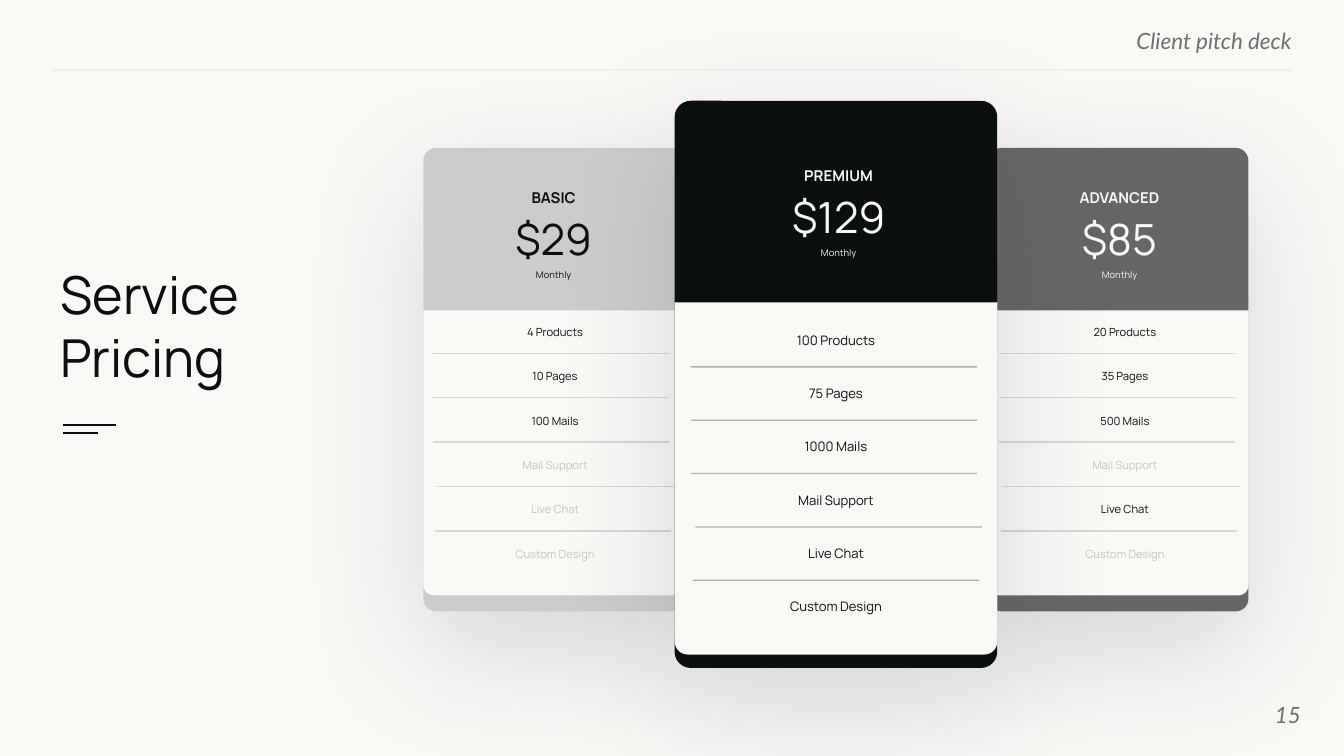
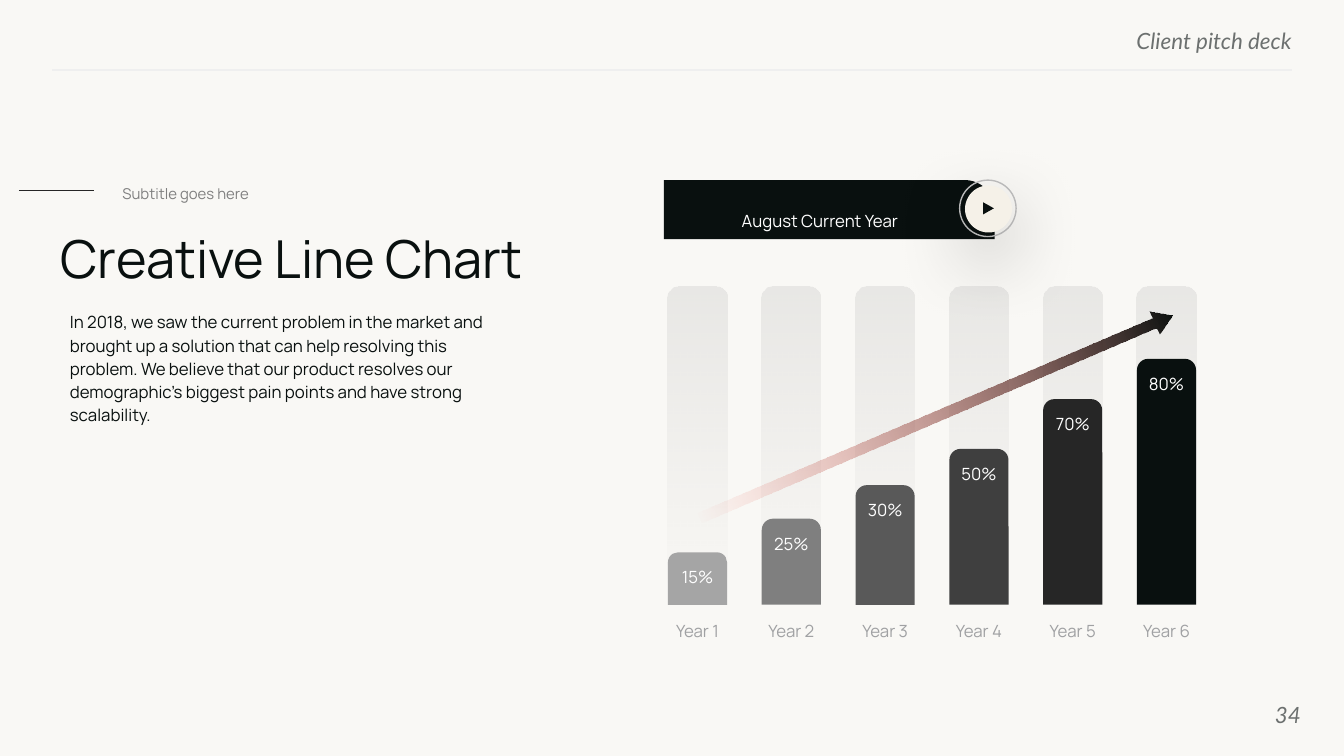
from lxml import etree
from pptx import Presentation
from pptx.dml.color import RGBColor
from pptx.enum.shapes import MSO_CONNECTOR, MSO_SHAPE
from pptx.enum.text import MSO_ANCHOR, MSO_AUTO_SIZE, PP_ALIGN
from pptx.oxml.ns import qn
from pptx.util import Inches, Pt

LINE = MSO_CONNECTOR.STRAIGHT
ROUND, ROUND_TOP = MSO_SHAPE.ROUNDED_RECTANGLE, MSO_SHAPE.ROUND_2_SAME_RECTANGLE
ROUND_CORNER, UP_ARROW = MSO_SHAPE.ROUND_1_RECTANGLE, MSO_SHAPE.UP_ARROW
OVAL, TRIANGLE = MSO_SHAPE.OVAL, MSO_SHAPE.ISOSCELES_TRIANGLE
LEFT, CENTER, RIGHT = PP_ALIGN.LEFT, PP_ALIGN.CENTER, PP_ALIGN.RIGHT
TOP, MIDDLE = MSO_ANCHOR.TOP, MSO_ANCHOR.MIDDLE

rgb = RGBColor.from_string
INK, PAPER, WHITE = "09100F", "F9F8F5", "FFFFFF"
STONE, RULE, FADED, HEADER = "A5A5A5", "D7D7D7", "C4C4C4", "6C706F"
CHARCOAL, GREY = "262626", "7F7F7F"
# colour, opacity in percent, blur and distance in points
CARD_SHADOW = ("221B43", 15, 69, 22)
BUTTON_SHADOW = ("000000", 29, 40, 13)

prs = Presentation()
prs.slide_width, prs.slide_height = Inches(10), Inches(5.625)
COL = prs.slide_width / 100  # square grid: 100 columns, 56.25 rows
prs.slide_master.background.fill.solid()
prs.slide_master.background.fill.fore_color.rgb = rgb(PAPER)


def label(s, x, y, w, h, text, size, color=INK, align=CENTER, font="Manrope",
          bold=False, italic=False, spacing=1.0, anchor=TOP, inset=(0.7, 0.4),
          wrap=False, box=None):
    """Write text into box, or into a new text box, placed in grid columns."""
    box = box or s.shapes.add_textbox(0, 0, 0, 0)
    box.left, box.top, box.width, box.height = [round(v * COL) for v in (x, y, w, h)]
    tf = box.text_frame
    tf.text = text
    tf.word_wrap, tf.auto_size, tf.vertical_anchor = wrap, MSO_AUTO_SIZE.NONE, anchor
    tf.margin_left = tf.margin_right = round(inset[0] * COL)
    tf.margin_top = tf.margin_bottom = round(inset[1] * COL)
    p = tf.paragraphs[0]
    p.alignment, p.line_spacing = align, spacing
    f = p.runs[0].font
    f.name, f.size, f.bold, f.italic = font, Pt(size), bold, italic
    f.color.rgb = rgb(color)


def draw(s, kind, x, y, w, h, colors, alphas=(), adj=(), rot=0, shadow=None, weight=0.75):
    """Draw a line or a shape; two colors make a gradient from top to bottom."""
    x, y, w, h = [round(v * COL) for v in (x, y, w, h)]
    if kind is LINE:
        sp = s.shapes.add_connector(LINE, x, y, x + w, y + h)
        sp.line.color.rgb, sp.line.width = rgb(colors[0]), Pt(weight)
        etree.SubElement(sp._element.spPr, qn("a:effectLst"))
    else:
        sp = s.shapes.add_shape(kind, x, y, w, h)
        sp.shadow.inherit = False
        sp.line.fill.background()
        sp.rotation = rot
        for i, value in enumerate(adj):
            sp.adjustments[i] = value
        if len(colors) == 2:
            sp.fill.gradient()
            sp.fill.gradient_angle = 270
            for stop, color in zip(sp.fill.gradient_stops, colors):
                stop.color.rgb = rgb(color)
        else:
            sp.fill.solid()
            sp.fill.fore_color.rgb = rgb(colors[0])
    spPr = sp._element.spPr
    for clr, alpha in zip(spPr.xpath(".//a:srgbClr"), alphas):
        etree.SubElement(clr, qn("a:alpha"), val=str(alpha * 1000))
    if shadow:
        color, alpha, blur, dist = shadow
        outer = etree.SubElement(spPr.find(qn("a:effectLst")), qn("a:outerShdw"),
                                 blurRad=str(Pt(blur)), dist=str(Pt(dist)),
                                 dir="5400000", algn="t", rotWithShape="0")
        clr = etree.SubElement(outer, qn("a:srgbClr"), val=color)
        etree.SubElement(clr, qn("a:alpha"), val=str(alpha * 1000))
    return sp


# Title, header and page number of every slide
slides = []
for title, x, y, w, number in [("Service Pricing", 4.5, 19.5, 21, "15"),
                               ("Creative Line Chart", 4.5, 16.8, 92.3, "34")]:
    s = prs.slides.add_slide(prs.slide_layouts[5])
    label(s, x, y, w, 5.1, title, 28, align=LEFT, inset=(0, 0), wrap=True,
          box=s.shapes.title)
    s.shapes.title.text_frame.paragraphs[0].space_after = Pt(10)
    running = dict(color=HEADER, align=RIGHT, font="Lato", italic=True, inset=(0, 0))
    label(s, 57.6, 2, 38.5, 1.8, "Client pitch deck", 12, **running)
    draw(s, LINE, 3.9, 5.2, 92.2, 0, ["EFEFEF"])
    label(s, 90.8, 51, 6, 4.3, number, 12, anchor=MIDDLE, **running)
    slides.append(s)

# Service pricing: three cards, the premium one in front
s = slides[0]
for y, w in [(31.6, 3.9), (32.2, 2.6)]:
    draw(s, LINE, 4.7, y, w, 0, [INK], weight=1)

side = dict(y=11, w=19.3, h=34.5, panel_y=23.1, panel_h=21.2, head_y=13.6,
            row_y=23.8, row_h=1.8, pitch=3.3, size=6, rule_y=26.3, rule_dx=0.7,
            rule_w=17.6, rule=RULE, alphas=())
front = dict(y=7.5, w=24, h=42.2, panel_y=22.5, panel_h=26.2, head_y=12,
             row_y=24.3, row_h=3.1, pitch=3.97, size=7, rule_y=27.3, rule_dx=1.2,
             rule_w=21.3, rule=INK, alphas=(30,))
features = ["Mail Support", "Live Chat", "Custom Design"]
rule_shifts = [0, 0, 0, 0.35, 0.15]
cards = [
    (side, 31.5, 41.2, 41.3, "CCCCCC", INK, "BASIC", "$29",
     ["4 Products", "10 Pages", "100 Mails"], features),
    (side, 73.6, 83.3, 83.7, "666666", PAPER, "ADVANCED", "$85",
     ["20 Products", "35 Pages", "500 Mails"], ["Mail Support", "Custom Design"]),
    (front, 50.2, 62.4, 62.2, INK, PAPER, "PREMIUM", "$129",
     ["100 Products", "75 Pages", "1000 Mails"], []),
]
for c, x, head_x, row_x, back, ink, plan, price, amounts, missing in cards:
    draw(s, ROUND, x, c["y"], c["w"], c["h"], [back], adj=[0.05], shadow=CARD_SHADOW)
    draw(s, ROUND_TOP, x, c["panel_y"], c["w"], c["panel_h"], [PAPER],
         adj=[0.04, 0], rot=180)
    for i, text in enumerate(amounts + features):
        label(s, row_x - 4, c["row_y"] + i * c["pitch"], 8, c["row_h"], text, c["size"],
              FADED if text in missing else INK)
    for i, shift in enumerate(rule_shifts):
        draw(s, LINE, x + c["rule_dx"] + shift, c["rule_y"] + i * c["pitch"],
             c["rule_w"], 0, [c["rule"]], c["alphas"])
    for text, dy, w, h, size in [(plan, 0, 11.8, 2.1, 8), (price, 1.8, 9.7, 4.6, 23),
                                 ("Monthly", 6, 5.8, 1.6, 5)]:
        label(s, head_x - w / 2, c["head_y"] + dy, w, h, text, size, ink,
              bold=text == plan)

# Creative line chart: bars on faded tracks under a rising arrow
s = slides[1]
BASE, BAR_W, BAR_PITCH, TRACK_H = 45, 4.4, 6.98, 23.7
bars = [("15%", 3.9, STONE), ("25%", 6.4, GREY), ("30%", 8.9, "595959"),
        ("50%", 11.6, "3F3F3F"), ("70%", 15.3, CHARCOAL), ("80%", 18.3, INK)]
for i, (share, h, color) in enumerate(bars):
    x = 49.7 + i * BAR_PITCH
    draw(s, ROUND_TOP, x, BASE - TRACK_H, BAR_W, TRACK_H, [STONE, STONE], (20, 0),
         adj=[0.19, 0])
    draw(s, ROUND_TOP, x, BASE - h, BAR_W, h, [color], adj=[0.19, 0])
    for text, y, ink in [(share, BASE - h + 0.7, WHITE),
                         (f"Year {i + 1}", BASE + 0.8, "A0A1A3")]:
        label(s, x - 1.15, y, 6.7, 2.3, text, 9, ink)
draw(s, UP_ARROW, 68.7, 11.9, 1.9, 38.2, [INK, "FF5B4C"], (100, 0),
     adj=[0.43, 0.79], rot=66.8)

label(s, 8.4, 12.7, 33.1, 2.1, "Subtitle goes here", 8, GREY, LEFT, spacing=1.5)
draw(s, LINE, 1.4, 14.2, 5.6, 0, [CHARCOAL])
label(s, 4.5, 22.6, 33.1, 9.2,
      "In 2018, we saw the current problem in the market and brought up a solution "
      "that can help resolving this problem. We believe that our product resolves our "
      "demographic’s biggest pain points and have strong scalability.",
      9, align=LEFT, spacing=1.15, wrap=True)

# Date banner with its play button
draw(s, ROUND_CORNER, 49.4, 13.4, 24.6, 4.4, [INK], adj=[0.5])
label(s, 50.5, 14.5, 21, 2.3, "August Current Year", 9, WHITE, spacing=1.5)
ring = draw(s, OVAL, 71.4, 13.4, 4.2, 4.2, [PAPER])
ring.fill.background()
ring.line.color.rgb, ring.line.width = rgb("BFBFBF"), Pt(0.75)
draw(s, OVAL, 71.8, 13.8, 3.5, 3.5, ["F5F1E8"], shadow=BUTTON_SHADOW)
draw(s, TRIANGLE, 73.1, 15.1, 0.9, 0.8, [INK], rot=90)

prs.save("out.pptx")
